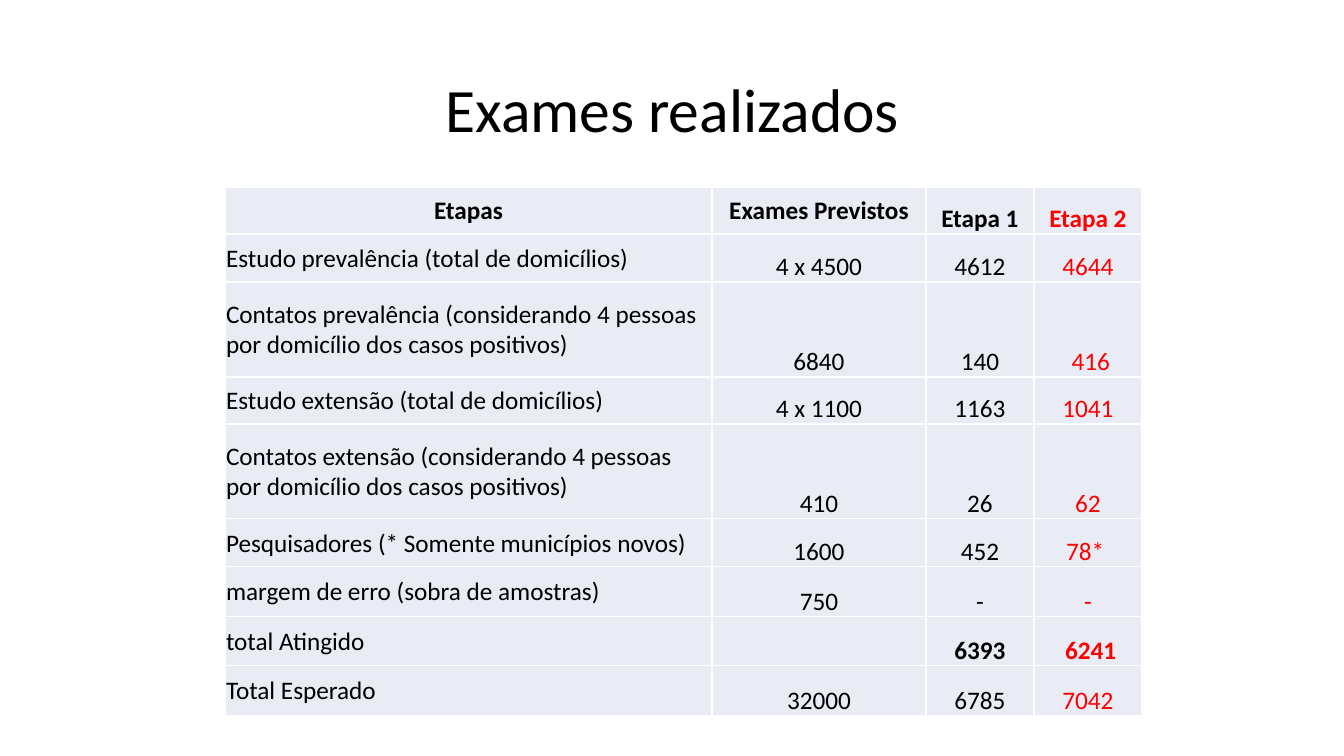
"""Builds the slide with the table of exams planned and carried out."""
from lxml.etree import SubElement
from pptx import Presentation
from pptx.dml.color import RGBColor
from pptx.enum.text import MSO_ANCHOR as Anchor, PP_ALIGN as Align
from pptx.oxml.ns import qn
from pptx.util import Emu, Pt

COLORS = {"text": "000000", "stage2": "FF0000", "cell": "E9EBF5", "border": "FFFFFF"}
FONT = "Calibri"
COLUMN_WIDTHS = [487, 214, 108, 108]
ROW_HEIGHTS = [47, 48, 95, 47, 95, 48, 50, 49, 50]
EXAMS = [
    ["Etapas", "Exames Previstos", "Etapa 1", "Etapa 2"],
    ["Estudo prevalência (total de domicílios)", "4 x 4500", "4612", "4644"],
    ["Contatos prevalência (considerando 4 pessoas por domicílio dos casos positivos)",
     "6840", "140", " 416"],
    ["Estudo extensão (total de domicílios)", "4 x 1100", "1163", "1041"],
    ["Contatos extensão (considerando 4 pessoas por domicílio dos casos positivos)",
     "410", "26", "62"],
    ["Pesquisadores (* Somente municípios novos)", "1600", "452", "78* "],
    ["margem de erro (sobra de amostras)", "750", " - ", " - "],
    ["total Atingido", "", "6393", " 6241"],
    ["Total Esperado", "32000", "6785", "7042"],
]
HEADER_ROW, REACHED_ROW = 0, 7
CELL_FORMAT = {"margin_left": 1, "margin_top": 1, "margin_right": 1, "margin_bottom": 0}


def px(length):
    """Turn pixels into EMU."""
    return Emu(round(length * 914400 / 100.8))


def write(frame, text, align, size, color, bold=False):
    """Put one formatted paragraph into a text frame."""
    paragraph = frame.paragraphs[0]
    paragraph.alignment = align
    if text:
        run = paragraph.add_run()
        run.text = text
        font = run.font
    else:
        font = paragraph.font
    for name, value in {"name": FONT, "size": Pt(size), "bold": bold}.items():
        setattr(font, name, value)
    font.color.rgb = RGBColor.from_string(COLORS[color])
    return paragraph


def add_borders(cell):
    """Draw a thin line on each side of a cell."""
    properties = cell._tc.get_or_add_tcPr()
    for side in ("a:lnL", "a:lnR", "a:lnT", "a:lnB"):
        line = SubElement(properties, qn(side), w=str(Pt(1)))
        fill = SubElement(line, qn("a:solidFill"))
        SubElement(fill, qn("a:srgbClr"), val=COLORS["border"])


def fill_cell(cell, row, column, text):
    """Format one cell by its place in the table."""
    add_borders(cell)
    cell.fill.solid()
    cell.fill.fore_color.rgb = RGBColor.from_string(COLORS["cell"])
    for name, value in CELL_FORMAT.items():
        setattr(cell, name, px(value))
    header = row == HEADER_ROW
    centred_height = column == 0 or (header and column == 1)
    cell.vertical_anchor = Anchor.MIDDLE if centred_height else Anchor.BOTTOM
    align = Align.LEFT if column == 0 and not header else Align.CENTER
    bold = header or (row == REACHED_ROW and column > 1)
    color = "stage2" if column == 3 else "text"
    write(cell.text_frame, text, align, 18, color, bold)


def add_title(slide, text):
    """Place the slide title."""
    title = slide.shapes.title
    places = {"left": 93, "top": 40, "width": 1159, "height": 146}
    for name, value in places.items():
        setattr(title, name, px(value))
    title.text_frame.vertical_anchor = Anchor.MIDDLE
    write(title.text_frame, text, Align.CENTER, 44, "text").line_spacing = 0.9


def add_exam_table(slide, left, top):
    """Add the table of exams."""
    table = slide.shapes.add_table(
        len(ROW_HEIGHTS), len(COLUMN_WIDTHS), px(left), px(top),
        px(sum(COLUMN_WIDTHS)), px(sum(ROW_HEIGHTS))).table
    table.horz_banding = False
    for column, width in zip(table.columns, COLUMN_WIDTHS):
        column.width = px(width)
    for row, height in zip(table.rows, ROW_HEIGHTS):
        row.height = px(height)
    for row, texts in enumerate(EXAMS):
        for column, text in enumerate(texts):
            fill_cell(table.cell(row, column), row, column, text)


def main():
    """Build and save the slide."""
    deck = Presentation()
    deck.slide_width, deck.slide_height = px(1344), px(756)
    slide = deck.slides.add_slide(deck.slide_layouts[5])
    add_title(slide, "Exames realizados")
    add_exam_table(slide, 225, 187)
    deck.save("out.pptx")


if __name__ == "__main__":
    main()
